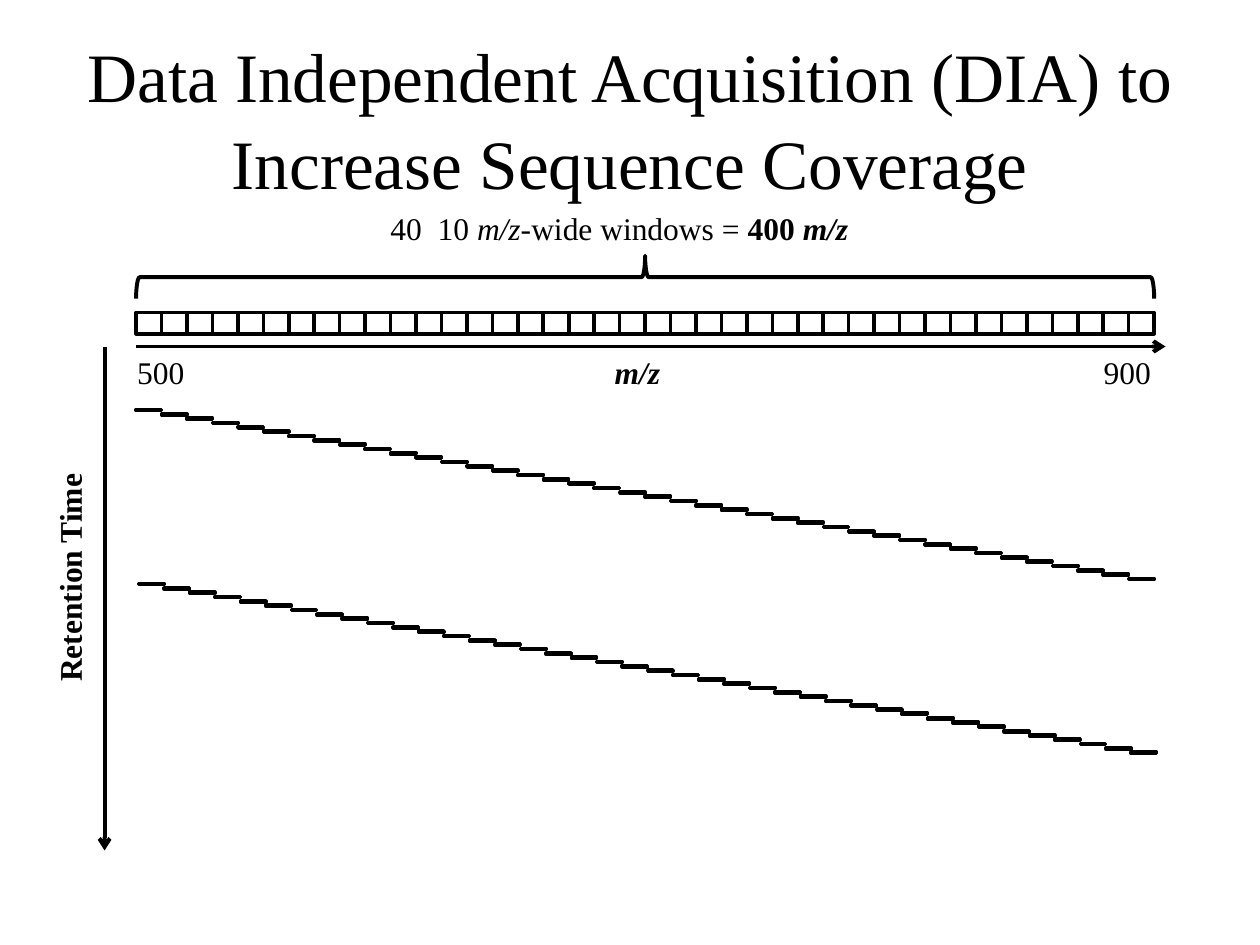
from lxml.etree import SubElement
from pptx import Presentation
from pptx.dml.color import RGBColor
from pptx.enum.shapes import MSO_CONNECTOR, MSO_SHAPE
from pptx.enum.text import MSO_ANCHOR, MSO_AUTO_SIZE, PP_ALIGN
from pptx.oxml.ns import qn
from pptx.util import Inches, Pt

FONT = "Times New Roman"
BLACK, WHITE = "000000", "FFFFFF"
WINDOWS = 40
AXIS_LEFT, SCAN_WIDTH = 1.08, 8.08
PITCH = SCAN_WIDTH / WINDOWS
STEP_DROP = 1.34 / (WINDOWS - 1)


def paint(color_format, color):
    """Apply a hex colour to a line, fill or font colour."""
    color_format.rgb = RGBColor.from_string(color)


def add_run(p, text, size=18, bold=False, italic=False):
    """Add one formatted run to a paragraph."""
    r = p.add_run()
    r.text = text
    r.font.name, r.font.size = FONT, Pt(size)
    r.font.bold, r.font.italic = bold, italic
    paint(r.font.color, BLACK)


def add_title(s, text):
    """Place and fill the title placeholder."""
    sp = s.shapes.title
    sp.left, sp.top, sp.width, sp.height = map(Inches, (0.5, 0.3, 9, 1.25))
    tf = sp.text_frame
    tf.word_wrap = True
    tf.auto_size = MSO_AUTO_SIZE.NONE
    tf.vertical_anchor = MSO_ANCHOR.MIDDLE
    p = tf.paragraphs[0]
    p.alignment = PP_ALIGN.CENTER
    p.line_spacing = 1.05
    add_run(p, text, 39.6)


def add_label(s, x, y, w, runs, wrap=False, rotation=0):
    """Add a one-line label from (text, bold, italic) runs."""
    sp = s.shapes.add_textbox(Inches(x), Inches(y), Inches(w), Inches(0.4))
    sp.rotation = rotation
    tf = sp.text_frame
    tf.word_wrap = wrap
    tf.auto_size = MSO_AUTO_SIZE.SHAPE_TO_FIT_TEXT
    for text, bold, italic in runs:
        add_run(tf.paragraphs[0], text, bold=bold, italic=italic)


def add_windows(shapes, x, y, h, drop=0):
    """Add a row of isolation windows, each lower than the last by drop."""
    for i in range(WINDOWS):
        sp = shapes.add_shape(MSO_SHAPE.RECTANGLE, Inches(x + i * PITCH),
                              Inches(y + i * drop), Inches(PITCH), Inches(h))
        sp.shadow.inherit = False
        sp.fill.solid()
        paint(sp.fill.fore_color, WHITE)
        paint(sp.line.color, BLACK)
        sp.line.width = Pt(2)


def add_brace(s, x, y, w, h):
    """Add a brace that spans a width and points up."""
    sp = s.shapes.add_shape(MSO_SHAPE.LEFT_BRACE, Inches(x + (w - h) / 2),
                            Inches(y + (h - w) / 2), Inches(h), Inches(w))
    sp.rotation = 90
    sp.shadow.inherit = False
    sp.fill.background()
    paint(sp.line.color, BLACK)
    sp.line.width = Pt(2.25)


def add_arrow(s, x1, y1, x2, y2):
    """Add a straight axis with an open arrowhead at its end."""
    sp = s.shapes.add_connector(MSO_CONNECTOR.STRAIGHT,
                                *map(Inches, (x1, y1, x2, y2)))
    paint(sp.line.color, BLACK)
    sp.line.width = Pt(2.25)
    SubElement(sp.line._get_or_add_ln(), qn("a:tailEnd"), type="arrow")
    SubElement(sp._element.spPr, qn("a:effectLst"))


def main():
    """Build the slide."""
    prs = Presentation()
    prs.slide_width, prs.slide_height = Inches(10), Inches(7.5)
    s = prs.slides.add_slide(prs.slide_layouts[5])
    add_title(s, "Data Independent Acquisition (DIA) to Increase Sequence Coverage")

    add_windows(s.shapes, AXIS_LEFT, 2.48, 0.17)
    add_brace(s, AXIS_LEFT, 2.03, SCAN_WIDTH, 0.34)
    add_label(s, 3, 1.61, 4.19, [
        ("40  10 ", False, False), ("m/z-", False, True),
        ("wide windows = ", False, False), ("400 ", True, False),
        ("m/z", True, True)], wrap=True)

    add_arrow(s, AXIS_LEFT, 2.75, 9.25, 2.75)
    add_label(s, 4.78, 2.75, 0.68, [("m/z", True, True)])
    for x, text in ((0.99, "500"), (8.66, "900")):
        add_label(s, x, 2.75, 0.59, [(text, False, False)])

    for x, y in ((AXIS_LEFT, 3.25), (1.1, 4.63)):
        add_windows(s.shapes.add_group_shape().shapes, x, y, 0.01, STEP_DROP)

    add_arrow(s, 0.83, 2.75, 0.83, 6.75)
    add_label(s, -0.4, 4.36, 1.9, [("Retention Time", True, False)], rotation=270)
    prs.save("out.pptx")


if __name__ == "__main__":
    main()
